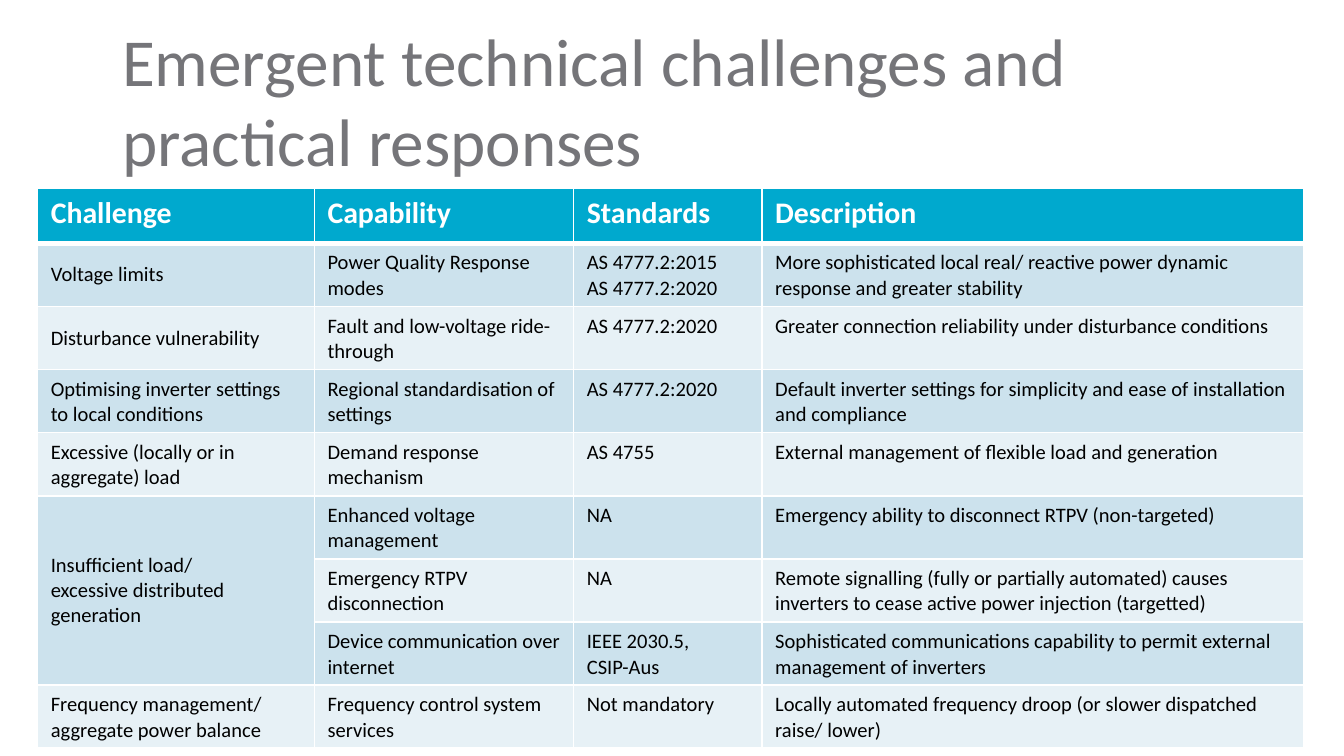
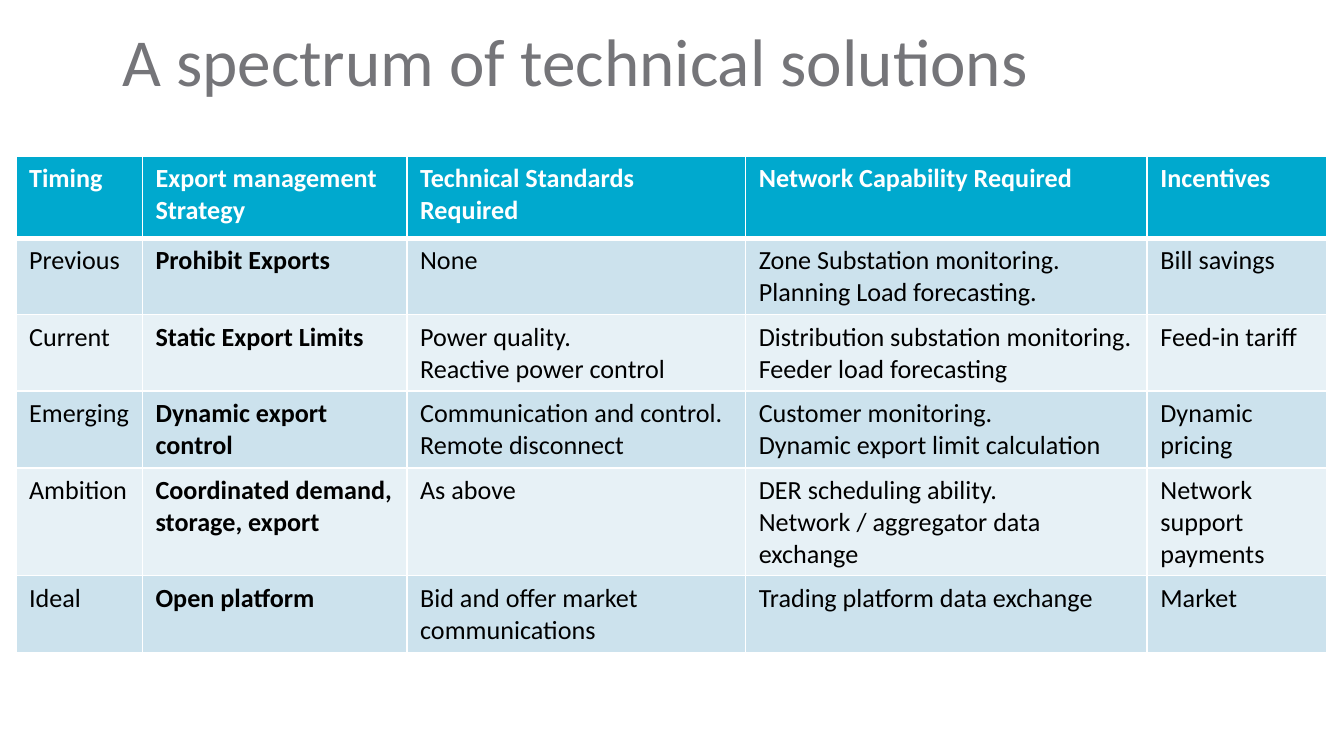
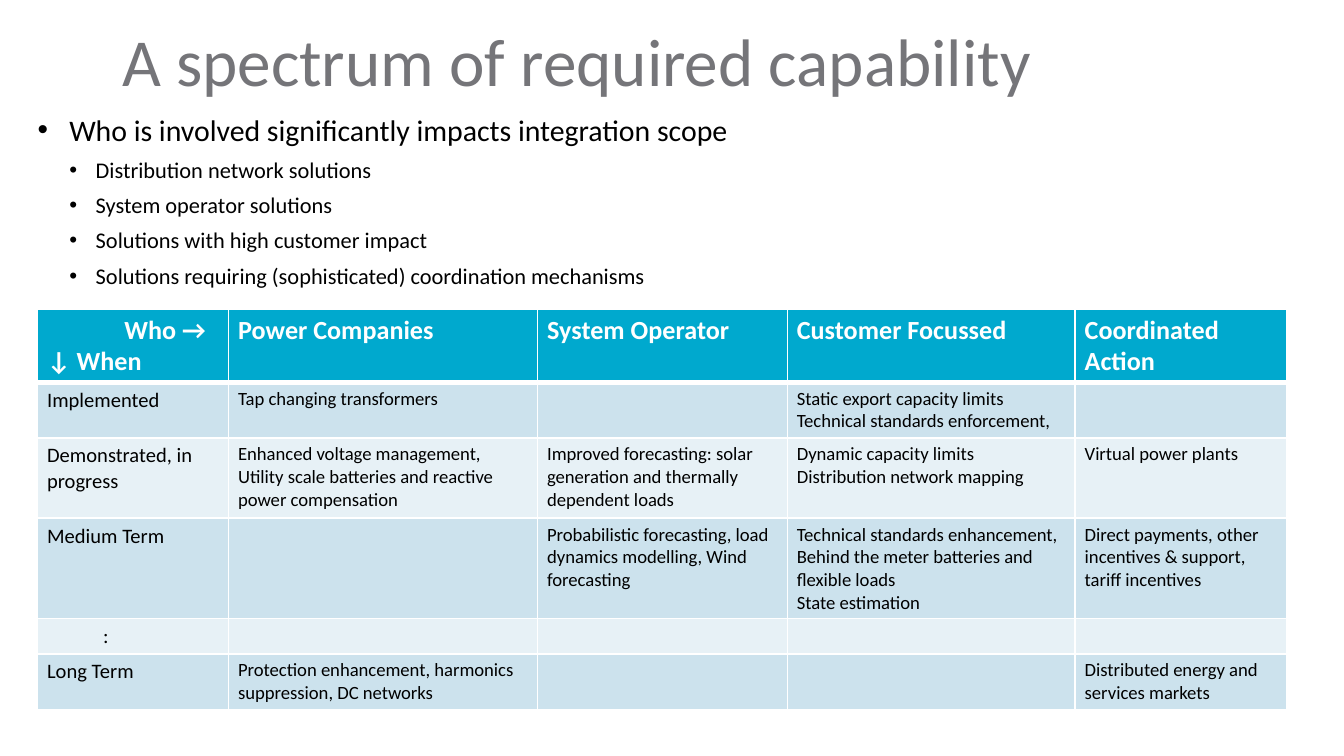
import pptx
import pptx.dml.color
import pptx.enum.text
import pptx.oxml
import pptx.oxml.ns
import pptx.util
from lxml import etree

Cm = pptx.util.Cm
Pt = pptx.util.Pt
qn = pptx.oxml.ns.qn

FONT = "Calibri"
GREY, BLACK, WHITE = "757579", "000000", "FFFFFF"
HEADER_FILL = "00A9CE"
BAND_FILLS = ("CCE2ED", "E7F1F6")
LEFT = 0.71

CHALLENGES = [
    ("Challenge", "Capability", "Standards", "Description"),
    ("Voltage limits", "Power Quality Response modes", "AS 4777.2:2015\nAS 4777.2:2020",
     "More sophisticated local real/ reactive power dynamic response and greater stability"),
    ("Disturbance vulnerability", "Fault and low-voltage ride-through", "AS 4777.2:2020",
     "Greater connection reliability under disturbance conditions"),
    ("Optimising inverter settings to local conditions", "Regional standardisation of settings",
     "AS 4777.2:2020",
     "Default inverter settings for simplicity and ease of installation and compliance"),
    ("Excessive (locally or in aggregate) load", "Demand response mechanism", "AS 4755",
     "External management of flexible load and generation"),
    ("Insufficient load/\nexcessive distributed generation", "Enhanced voltage management", "NA",
     "Emergency ability to disconnect RTPV (non-targeted)"),
    ("", "Emergency RTPV disconnection", "NA",
     "Remote signalling (fully or partially automated) causes inverters to cease active "
     "power injection (targetted)"),
    ("", "Device communication over internet", "IEEE 2030.5,\nCSIP-Aus",
     "Sophisticated communications capability to permit external management of inverters"),
    ("Frequency management/ aggregate power balance", "Frequency control system services",
     "Not mandatory", "Locally automated frequency droop (or slower dispatched raise/ lower)"),
]

STRATEGIES = [
    ("Timing", "Export management Strategy", "Technical Standards Required",
     "Network Capability Required", "Incentives"),
    ("Previous", "Prohibit Exports", "None",
     "Zone Substation monitoring.\nPlanning Load forecasting.", "Bill savings"),
    ("Current", "Static Export Limits", "Power quality.\nReactive power control",
     "Distribution substation monitoring. Feeder load forecasting", "Feed-in tariff"),
    ("Emerging", "Dynamic export control", "Communication and control.\nRemote disconnect",
     "Customer monitoring.\nDynamic export limit calculation", "Dynamic pricing"),
    ("Ambition", "Coordinated demand, storage, export", "As above",
     "DER scheduling ability.\nNetwork / aggregator data exchange", "Network support payments"),
    ("Ideal", "Open platform", "Bid and offer market communications",
     "Trading platform data exchange", "Market"),
]

CAPABILITIES = [
    ("Who →\n↓ When", "Power Companies", "System Operator", "Customer Focussed",
     "Coordinated Action"),
    ("Implemented", "Tap changing transformers", "",
     "Static export capacity limits\nTechnical standards enforcement,", ""),
    ("Demonstrated, in progress",
     "Enhanced voltage management, Utility scale batteries and reactive power compensation",
     "Improved forecasting: solar generation and thermally dependent loads",
     "Dynamic capacity limits\nDistribution network mapping", "Virtual power plants"),
    ("Medium Term", "",
     "Probabilistic forecasting, load dynamics modelling, Wind forecasting",
     "Technical standards enhancement,\nBehind the meter batteries and flexible loads\n"
     "State estimation",
     "Direct payments, other incentives & support, tariff incentives"),
    (":", "", "", "", ""),
    ("Long Term", "Protection enhancement, harmonics suppression, DC networks", "", "",
     "Distributed energy and services markets"),
]
AXIS_INDENTS = {"Who →": 1.46, ":": 1.06}

INVOLVEMENT = "Who is involved significantly impacts integration scope"
SOLUTION_GROUPS = [
    "Distribution network solutions",
    "System operator solutions",
    "Solutions with high customer impact",
    "Solutions requiring (sophisticated) coordination mechanisms",
]


def rgb(value):
    return pptx.dml.color.RGBColor.from_string(value)


def write(paragraph, text, size=12, color=BLACK, bold=False, indent=0, hanging=0,
          bullet=None, level=0, spacing=None, before=0):
    properties = paragraph._p.get_or_add_pPr()
    if indent:
        properties.set("marL", str(Cm(indent)))
        properties.set("indent", str(-Cm(hanging)))
    if bullet:
        etree.SubElement(properties, qn("a:buFont"), typeface="Arial")
        etree.SubElement(properties, qn("a:buChar"), char=bullet)
    paragraph.level = level
    if spacing:
        paragraph.line_spacing = spacing
    if before:
        paragraph.space_before = Pt(before)
    if not text:
        etree.SubElement(paragraph._p, qn("a:endParaRPr"), sz=str(size * 100))
        return
    run = paragraph.add_run()
    run.text = text
    run.font.name = FONT
    run.font.size = Pt(size)
    run.font.bold = bold
    run.font.color.rgb = rgb(color)


def add_frame(slide, left, top, width, height):
    frame = slide.shapes.add_textbox(Cm(left), Cm(top), Cm(width), Cm(height)).text_frame
    frame.word_wrap = True
    frame.margin_left = frame.margin_right = frame.margin_top = frame.margin_bottom = 0
    return frame


def add_title(slide, text, width=22.4, height=1.8):
    frame = add_frame(slide, 2.31, 0.36, width, height)
    write(frame.paragraphs[0], text, size=36, color=GREY)


def add_scope_list(slide, left, top, width, height):
    frame = add_frame(slide, left, top, width, height)
    write(frame.paragraphs[0], INVOLVEMENT, size=16, indent=0.6, hanging=0.6,
          bullet="•", spacing=0.9)
    for group in SOLUTION_GROUPS:
        write(frame.add_paragraph(), group, indent=1.1, hanging=0.5, bullet="•",
              level=1, spacing=0.9, before=6)


def set_borders(cell, row):
    properties = cell._tc.get_or_add_tcPr()
    weights = {"L": 1, "R": 1, "T": 3 if row == 1 else 1, "B": 3 if row == 0 else 1}
    for side, weight in weights.items():
        line = etree.SubElement(properties, qn(f"a:ln{side}"), w=str(Pt(weight)))
        fill = etree.SubElement(line, qn("a:solidFill"))
        etree.SubElement(fill, qn("a:srgbClr"), val=WHITE)


def add_grid(slide, left, top, widths, heights, content, header_size, sizes,
             bold_column=None, middle_column=None, margins=(0.25, 0.13), indents={}):
    table = slide.shapes.add_table(len(heights), len(widths), Cm(left), Cm(top),
                                   Cm(sum(widths)), Cm(sum(heights))).table
    for column, width in zip(table.columns, widths):
        column.width = Cm(width)
    for row, height in zip(table.rows, heights):
        row.height = Cm(height)
    for r, entries in enumerate(content):
        header = r == 0
        for c, entry in enumerate(entries):
            cell = table.cell(r, c)
            set_borders(cell, r)
            cell.fill.solid()
            cell.fill.fore_color.rgb = rgb(HEADER_FILL if header else BAND_FILLS[(r - 1) % 2])
            cell.margin_left = cell.margin_right = Cm(margins[0])
            cell.margin_top = cell.margin_bottom = Cm(margins[1])
            if c == middle_column and not header:
                cell.vertical_anchor = pptx.enum.text.MSO_ANCHOR.MIDDLE
            for i, line in enumerate(entry.split("\n")):
                frame = cell.text_frame
                write(frame.add_paragraph() if i else frame.paragraphs[0], line,
                      size=header_size if header else sizes[c],
                      color=WHITE if header else BLACK,
                      bold=header or c == bold_column, indent=indents.get(line, 0))
    return table


def build_challenges(slide):
    add_title(slide, "Emergent technical challenges and practical responses", height=3.68)
    table = add_grid(slide, LEFT, 3.56, [5.23, 4.9, 3.56, 10.24], [1.04] * len(CHALLENGES),
                     CHALLENGES, 16, [11] * 4, middle_column=0)
    table.cell(5, 0).merge(table.cell(7, 0))


def build_strategies(slide):
    add_title(slide, "A spectrum of technical solutions")
    add_grid(slide, 0.3, 2.95, [2.39, 5, 6.4, 7.59, 3.4], [1.55, 1.04, 0.61, 0.38, 1.98, 1.45],
             STRATEGIES, 14, [14] * 5, bold_column=1)


def build_capabilities(slide):
    add_scope_list(slide, LEFT, 2.18, 24, 3.68)
    add_title(slide, "A spectrum of required capability", width=18.59)
    add_grid(slide, LEFT, 5.84, [3.61, 5.84, 4.72, 5.44, 3.99],
             [1.35, 1.02, 1.52, 1.37, 0.64, 0.97], CAPABILITIES, 14, [11] + [10] * 4,
             margins=(0.18, 0.1), indents=AXIS_INDENTS)


def main():
    deck = pptx.Presentation()
    deck.slide_width, deck.slide_height = Cm(25.4), Cm(14.29)
    for build in (build_challenges, build_strategies, build_capabilities):
        build(deck.slides.add_slide(deck.slide_layouts[6]))
    deck.save("out.pptx")


if __name__ == "__main__":
    main()
